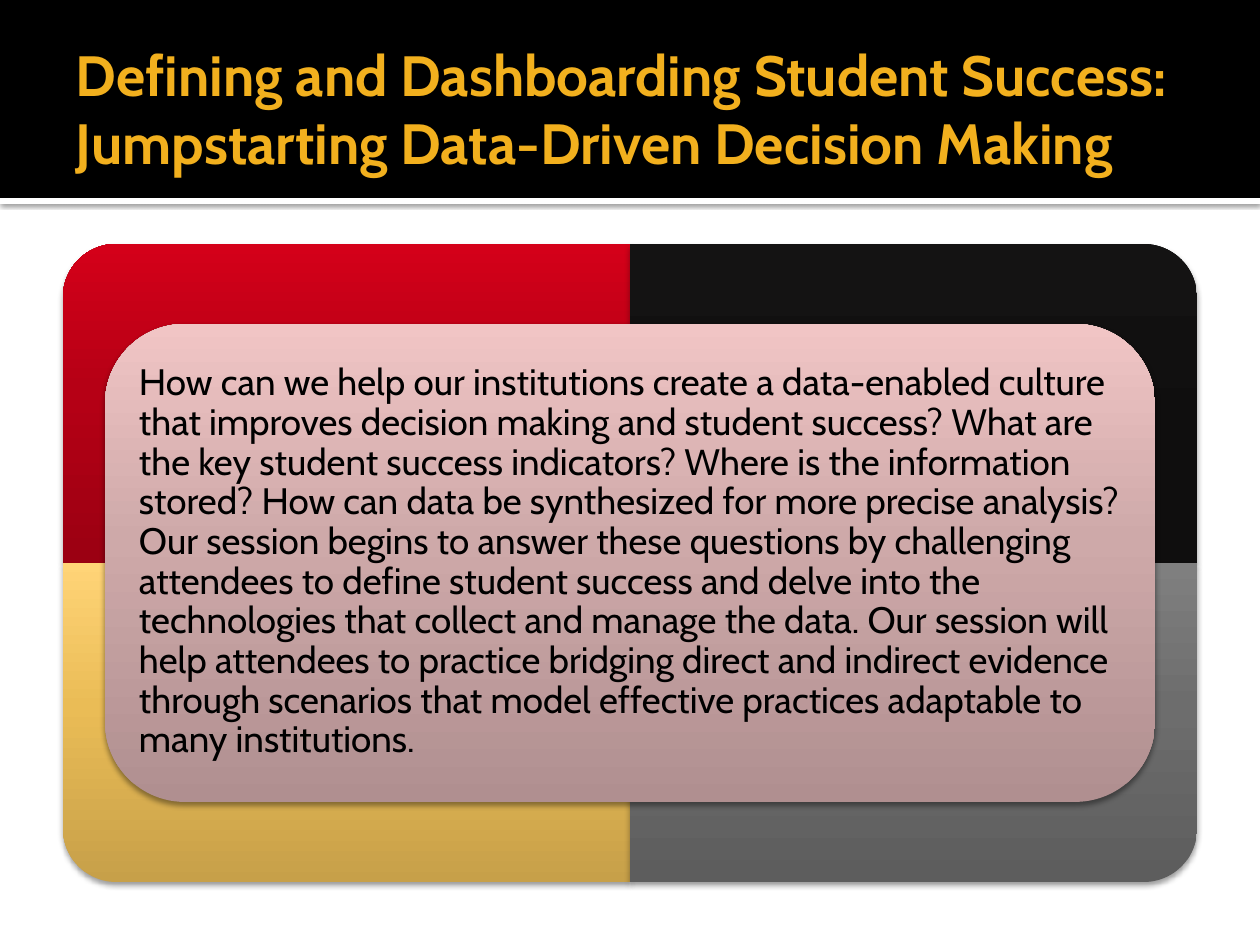
from copy import deepcopy

from lxml import etree
from pptx import Presentation
from pptx.dml.color import RGBColor
from pptx.enum.shapes import MSO_SHAPE
from pptx.enum.text import MSO_ANCHOR, MSO_AUTO_SIZE, PP_ALIGN
from pptx.oxml.ns import qn
from pptx.util import Pt

RECT = MSO_SHAPE.RECTANGLE
ONE_ROUND = MSO_SHAPE.ROUND_1_RECTANGLE
ROUNDED = MSO_SHAPE.ROUNDED_RECTANGLE
MIDDLE = MSO_ANCHOR.MIDDLE
LEFT = PP_ALIGN.LEFT
FIXED = MSO_AUTO_SIZE.NONE
PX = 914400 / 126  # EMU per pixel

COLORS = {"white": "FFFFFF", "black": "000000", "title": "F2B01E"}
# Gradients run from bottom to top
GRADIENTS = {
    "red": ("9B0012", "B60015", "D40019"),
    "black": ("0F0E0E", "111010", "141313"),
    "gold": ("C7A049", "EABC56", "FFD477"),
    "gray": ("5D5D5D", "6D6D6D", "7F7F7F"),
    "rose": ("B08F90", "CEA9A9", "F1C5C5"),
}

prs = Presentation()
prs.slide_width, prs.slide_height = round(1260 * PX), round(945 * PX)
slide = prs.slides.add_slide(prs.slide_layouts[5])
shapes = slide.shapes


def add_panel(kind, box, fill, rotation=0, shadow=None):
    """Solid fill for a hex string, gradient for a tuple; shadow is alpha, blur, distance."""
    panel = shapes.add_shape(kind, *[round(v * PX) for v in box])
    panel.rotation = rotation
    panel.shadow.inherit = False
    panel.line.fill.background()
    props = panel.fill._xPr
    if isinstance(fill, str):
        panel.fill.solid()
        panel.fill.fore_color.rgb = RGBColor.from_string(fill)
    else:
        panel.fill.gradient()
        panel.fill.gradient_angle = 90
        gradient = props.find(qn("a:gradFill"))
        gradient.set("rotWithShape", "0")
        stops = gradient.find(qn("a:gsLst"))
        stops.insert(1, deepcopy(stops[0]))
        for stop, position, color in zip(panel.fill.gradient_stops, (0, 0.55, 1), fill):
            stop.position = position
            stop.color.rgb = RGBColor.from_string(color)
    if shadow:
        alpha, blur, distance = shadow
        outer = etree.SubElement(
            props.find(qn("a:effectLst")), qn("a:outerShdw"), blurRad=str(Pt(blur)),
            dist=str(Pt(distance)), dir="5400000", algn="ctr", rotWithShape="0")
        tint = etree.SubElement(outer, qn("a:srgbClr"), val=COLORS["black"])
        etree.SubElement(tint, qn("a:alpha"), val=str(alpha * 1000))
    return panel


def write_text(holder, text, box, size, color, insets, bold=False, spacing=1.0):
    holder.left, holder.top, holder.width, holder.height = [round(v * PX) for v in box]
    frame = holder.text_frame
    frame.word_wrap = True
    frame.auto_size = FIXED
    frame.vertical_anchor = MIDDLE
    (frame.margin_left, frame.margin_top,
     frame.margin_right, frame.margin_bottom) = [round(v * PX) for v in insets]
    paragraph = frame.paragraphs[0]
    paragraph.alignment = LEFT
    paragraph.line_spacing = spacing
    run = paragraph.add_run()
    run.text = text
    run.font.name = "Cabin"
    run.font.size = Pt(size)
    run.font.bold = bold
    run.font.color.rgb = RGBColor.from_string(color)


# Header band with its white rule, placed behind the title
rule = add_panel(RECT, (0, 198, 1260, 6), COLORS["white"], shadow=(60, 2.5, 0.8))
band = add_panel(RECT, (0, 0, 1260, 198), COLORS["black"])
title = shapes.title
for backdrop in (rule, band):
    title._element.addprevious(backdrop._element)

write_text(title, "Defining and Dashboarding Student Success: "
           "Jumpstarting Data-Driven Decision Making",
           (63, 21, 1134, 173), 32.4, COLORS["title"], (13, 6, 6, 6), bold=True)

# Four quadrants, each turned so its round corner faces outward
LEFT_EDGE, TOP_EDGE, QUAD_W, QUAD_H = 63, 244, 567, 319
SOFT_SHADOW = (38, 3.1, 2)
quadrants = [("red", 0, 0, 270), ("black", 1, 0, 0), ("gold", 0, 1, 180), ("gray", 1, 1, 90)]
for name, column, row, rotation in quadrants:
    x, y = LEFT_EDGE + column * QUAD_W, TOP_EDGE + row * QUAD_H
    width, height = QUAD_W, QUAD_H
    if rotation in (90, 270):  # a quarter turn swaps the sides around the centre
        x, y = x + (width - height) / 2, y + (height - width) / 2
        width, height = height, width
    add_panel(ONE_ROUND, (x, y, width, height), GRADIENTS[name], rotation, SOFT_SHADOW)

# Central panel and session description
add_panel(ROUNDED, (105, 324, 1050, 478), GRADIENTS["rose"], shadow=SOFT_SHADOW)
description = (
    "How can we help our institutions create a data-enabled culture that improves "
    "decision making and student success? What are the key student success indicators? "
    "Where is the information stored? How can data be synthesized for more precise "
    "analysis? Our session begins to answer these questions by challenging attendees "
    "to define student success and delve into the technologies that collect and manage "
    "the data. Our session will help attendees to practice bridging direct and indirect "
    "evidence through scenarios that model effective practices adaptable to many "
    "institutions."
)
write_text(shapes.add_textbox(0, 0, 0, 0), description, (128, 347, 1003, 431),
           21, COLORS["black"], (11, 11, 11, 11), spacing=0.9)

prs.save("out.pptx")
